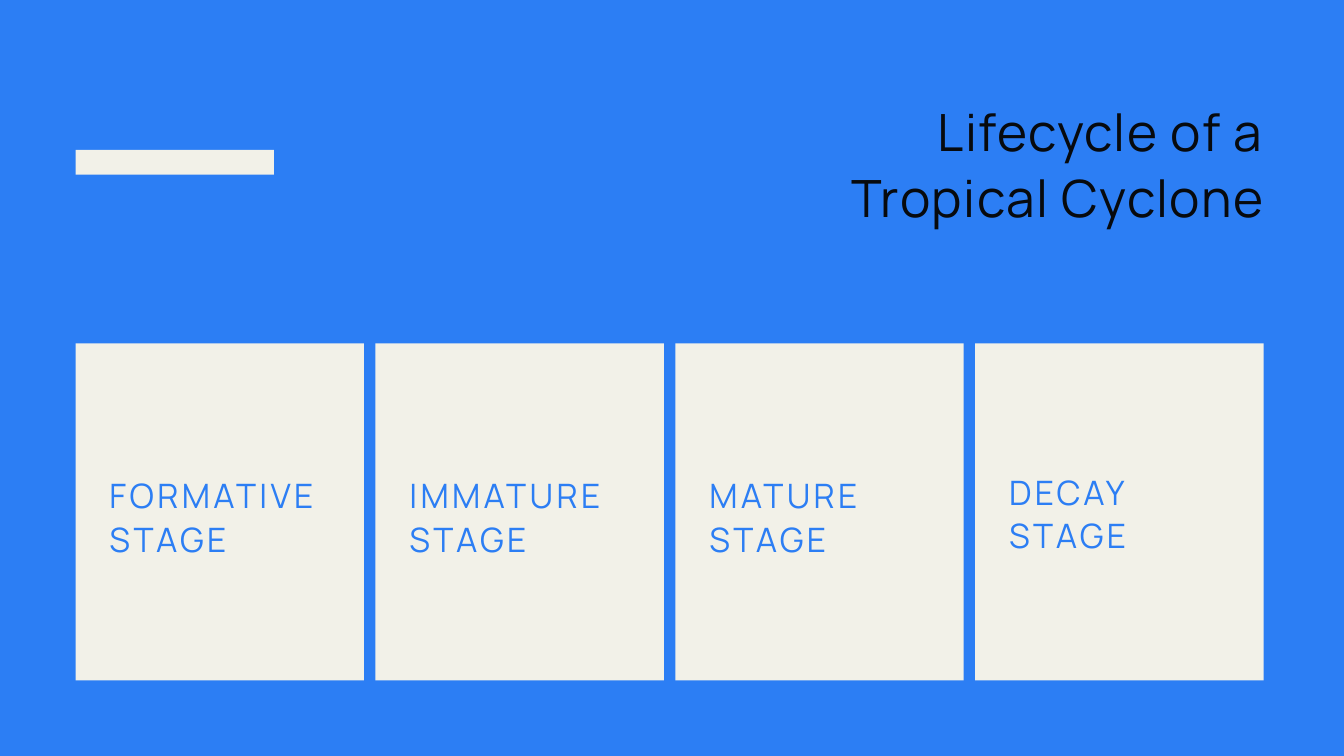
from dataclasses import dataclass

from pptx import Presentation
from pptx.dml.color import RGBColor
from pptx.enum.shapes import MSO_SHAPE
from pptx.enum.text import MSO_ANCHOR, MSO_AUTO_SIZE, PP_ALIGN
from pptx.util import Pt

RECT = MSO_SHAPE.RECTANGLE
TOP = MSO_ANCHOR.TOP
FIXED = MSO_AUTO_SIZE.NONE
LEFT, RIGHT = PP_ALIGN.LEFT, PP_ALIGN.RIGHT


@dataclass(frozen=True)
class Theme:
    blue: RGBColor = RGBColor(0x2C, 0x7E, 0xF4)
    cream: RGBColor = RGBColor(0xF2, 0xF1, 0xE8)
    ink: RGBColor = RGBColor(0x07, 0x0A, 0x0E)
    font: str = "Manrope"
    title: float = 55
    label: float = 36
    lead: float = 1.3  # line pitch as a share of type size


theme = Theme()


def block(x, y, w, h):
    """Add a plain cream rectangle."""
    shape = slide.shapes.add_shape(RECT, Pt(x), Pt(y), Pt(w), Pt(h))
    shape.shadow.inherit = False
    shape.fill.solid()
    shape.fill.fore_color.rgb = theme.cream
    shape.line.fill.background()


def write(frame, lines, size, color, track, align):
    """Fill a text frame, one paragraph per line, with letter spacing in points."""
    frame.margin_left = frame.margin_right = 0
    frame.margin_top = frame.margin_bottom = 0
    frame.word_wrap = True
    frame.auto_size = FIXED
    frame.vertical_anchor = TOP
    for i, line in enumerate(lines):
        para = frame.add_paragraph() if i else frame.paragraphs[0]
        para.alignment = align
        para.line_spacing = Pt(size * theme.lead)
        para.space_before = Pt(0)
        run = para.add_run()
        run.text = line
        run.font.name = theme.font
        run.font.size = Pt(size)
        run.font.color.rgb = color
        run.font._element.set("spc", str(round(track * 100)))


deck = Presentation()
deck.slide_width, deck.slide_height = Pt(1440), Pt(810)
slide = deck.slides.add_slide(deck.slide_layouts[5])
slide.background.fill.solid()
slide.background.fill.fore_color.rgb = theme.blue

# Heading
title = slide.shapes.title
title.left, title.top = Pt(797), Pt(101.5)
title.width, title.height = Pt(557.3), Pt(139.7)
write(title.text_frame, ["Lifecycle of a Tropical Cyclone"],
      theme.title, theme.ink, 1.6, RIGHT)
block(81, 160.6, 212.4, 26.6)

# Stage cards: name and top of its label
stages = [("FORMATIVE", 505.4), ("IMMATURE", 505.4),
          ("MATURE", 505.4), ("DECAY", 501.8)]
start, pitch, inset = 81, 321.3, 36.3
for i, (name, top) in enumerate(stages):
    x = start + i * pitch
    block(x, 368, 309, 361)
    label = slide.shapes.add_textbox(Pt(x + inset), Pt(top), Pt(237), Pt(91.4))
    write(label.text_frame, [name, "STAGE"], theme.label, theme.blue, 3.6, LEFT)

deck.save("out.pptx")
